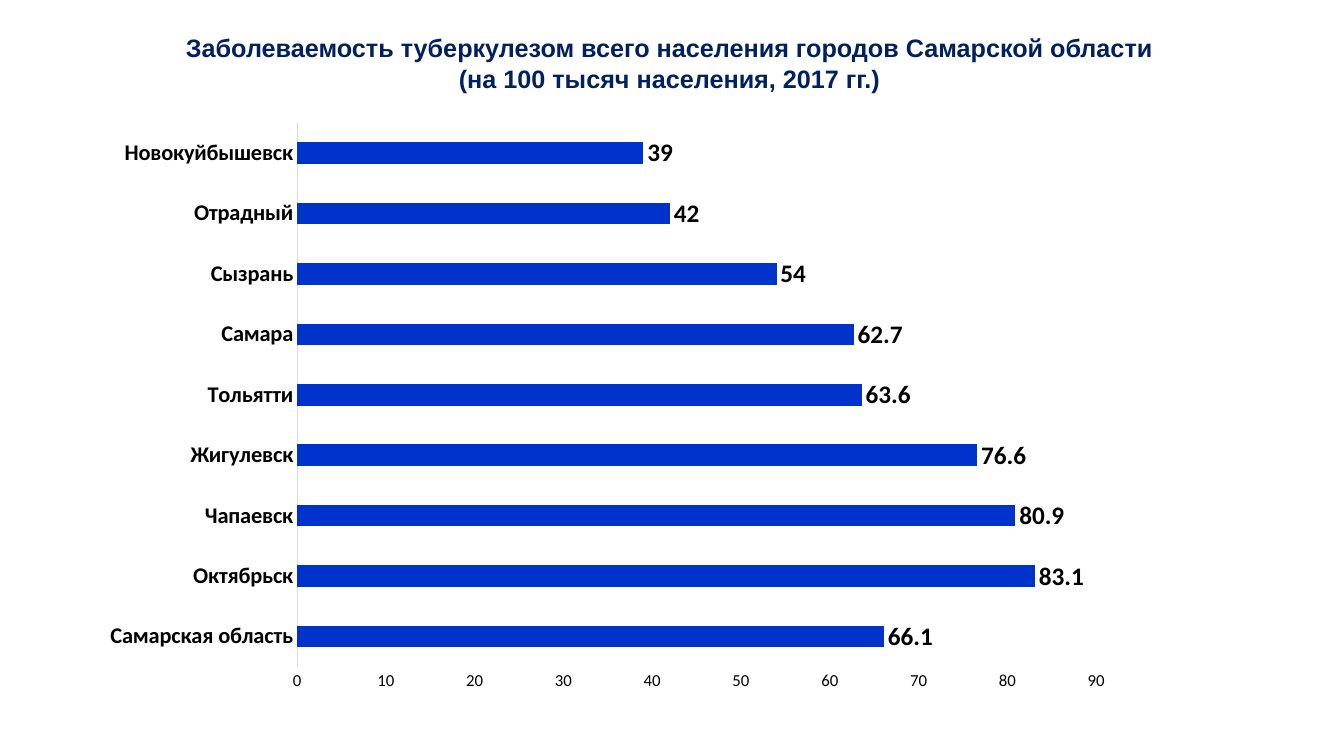
"""Builds a slide with a bar chart of tuberculosis incidence by city."""
from lxml.etree import SubElement
from pptx import Presentation
from pptx.chart.data import CategoryChartData
from pptx.dml.color import RGBColor
from pptx.enum.chart import XL_CHART_TYPE, XL_LABEL_POSITION, XL_TICK_MARK
from pptx.enum.text import MSO_ANCHOR, PP_ALIGN
from pptx.oxml.ns import qn
from pptx.util import Inches, Pt

TITLE = [
    "Заболеваемость туберкулезом всего населения городов Самарской области",
    "(на 100 тысяч населения, 2017 гг.)",
]
INCIDENCE = {
    "Самарская область": 66.1,
    "Октябрьск": 83.1,
    "Чапаевск": 80.9,
    "Жигулевск": 76.6,
    "Тольятти": 63.6,
    "Самара": 62.7,
    "Сызрань": 54,
    "Отрадный": 42,
    "Новокуйбышевск": 39,
}
PLOT_AREA = {"x": 0.2, "y": 0.01, "w": 0.77, "h": 0.91}

NAVY = RGBColor(0x00, 0x20, 0x60)
BLUE = RGBColor(0x00, 0x33, 0xCC)
BLACK = RGBColor(0x00, 0x00, 0x00)
GREY = RGBColor(0xD9, 0xD9, 0xD9)


def style_font(font, name, size, color, bold=False):
    font.name = name
    font.size = Pt(size)
    font.bold = bold
    font.color.rgb = color


def add_title(s):
    box = s.shapes.add_textbox(Inches(1.16), Inches(0.21), Inches(10.96), Inches(0.83))
    tf = box.text_frame
    tf.word_wrap = True
    tf.vertical_anchor = MSO_ANCHOR.MIDDLE
    tf.text = "\n".join(TITLE)
    for p in tf.paragraphs:
        p.alignment = PP_ALIGN.CENTER
        style_font(p.runs[0].font, "Arial", 18, NAVY, True)


def set_plot_area(chart):
    area = chart.element.find(".//" + qn("c:plotArea"))
    for old in area.findall(qn("c:layout")):
        area.remove(old)
    layout = SubElement(area, qn("c:layout"))
    area.insert(0, layout)
    manual = SubElement(layout, qn("c:manualLayout"))
    settings = {"layoutTarget": "inner", "xMode": "edge", "yMode": "edge", **PLOT_AREA}
    for tag, value in settings.items():
        SubElement(manual, qn("c:" + tag)).set("val", str(value))


def add_incidence_chart(s):
    data = CategoryChartData()
    data.categories = list(INCIDENCE)
    data.add_series("Заболеваемость", list(INCIDENCE.values()))
    chart = s.shapes.add_chart(
        XL_CHART_TYPE.BAR_CLUSTERED,
        Inches(0.89), Inches(1.16), Inches(10.29), Inches(5.93), data,
    ).chart
    chart.has_title = False
    chart.has_legend = False
    style_font(chart.font, "Calibri", 10, BLACK)

    cities, scale = chart.category_axis, chart.value_axis
    for axis, size, bold in ((cities, 16, True), (scale, 12, False)):
        axis.major_tick_mark = axis.minor_tick_mark = XL_TICK_MARK.NONE
        axis.has_major_gridlines = False
        style_font(axis.tick_labels.font, "Calibri", size, BLACK, bold)
    cities.format.line.color.rgb = GREY
    cities.format.line.width = Pt(0.75)
    scale.format.line.fill.background()
    scale.minimum_scale, scale.maximum_scale, scale.major_unit = 0, 90, 10

    plot = chart.plots[0]
    plot.gap_width = 182
    plot.vary_by_categories = False
    bars = plot.series[0]
    bars.format.fill.solid()
    bars.format.fill.fore_color.rgb = BLUE
    labels = bars.data_labels
    labels.show_value = True
    labels.position = XL_LABEL_POSITION.OUTSIDE_END
    style_font(labels.font, "Calibri", 18, BLACK, True)
    set_plot_area(chart)


def main():
    prs = Presentation()
    prs.slide_width, prs.slide_height = Inches(13.33), Inches(7.5)
    s = prs.slides.add_slide(prs.slide_layouts[6])
    add_title(s)
    add_incidence_chart(s)
    prs.save("out.pptx")


if __name__ == "__main__":
    main()
